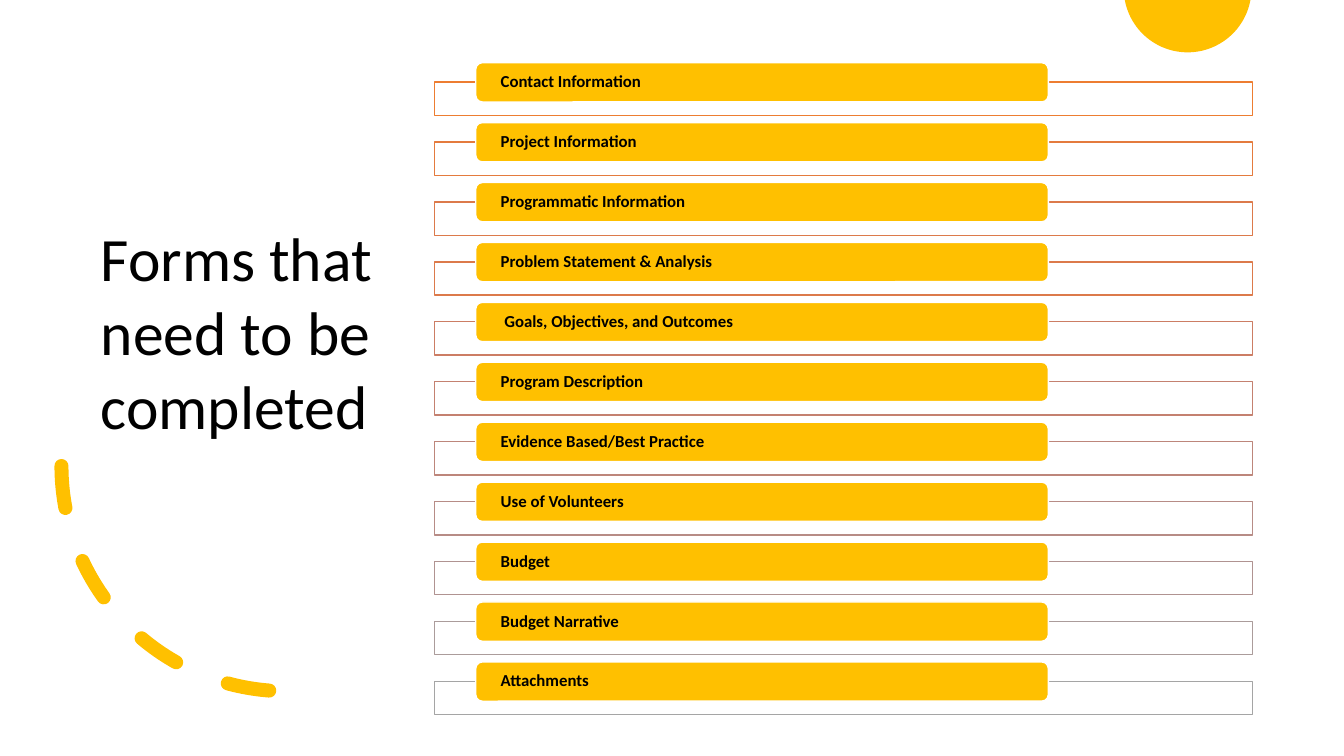
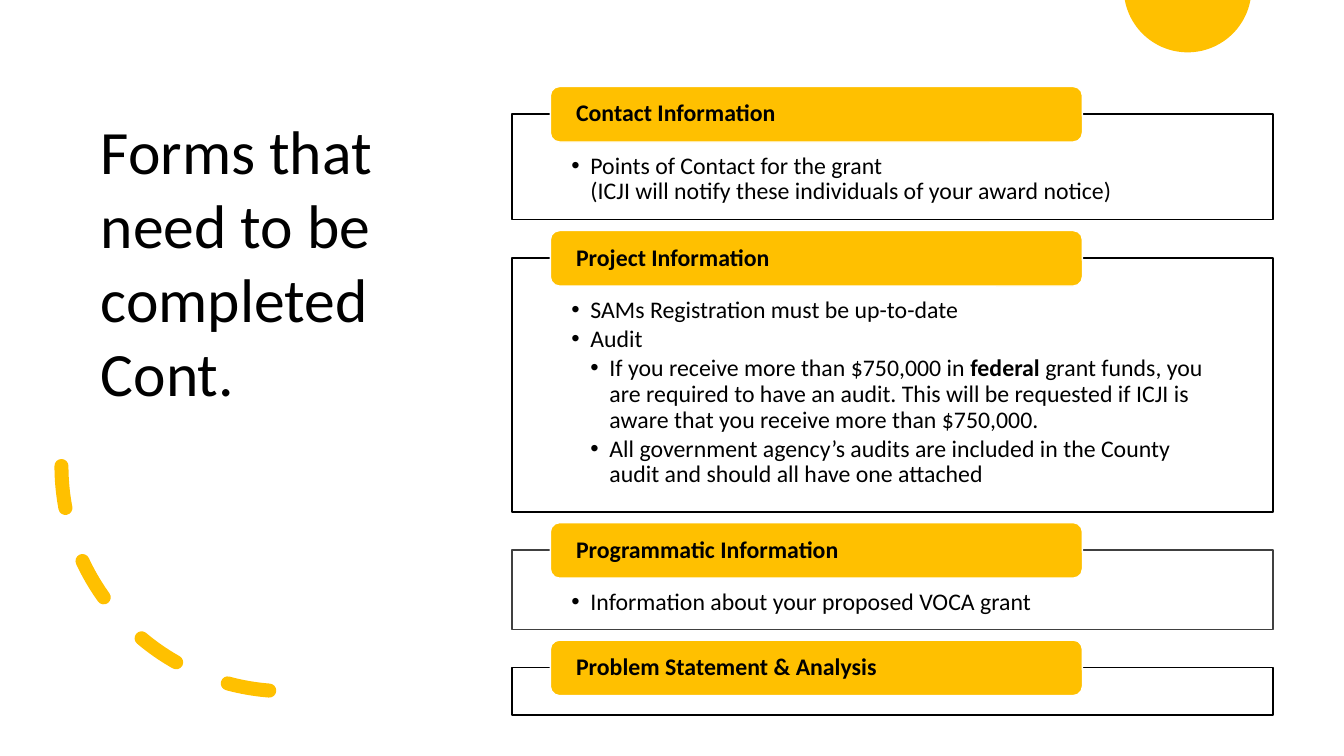
import math

from lxml import etree
from pptx import Presentation
from pptx.dml.color import RGBColor
from pptx.enum.dml import MSO_LINE
from pptx.enum.shapes import MSO_SHAPE
from pptx.enum.text import MSO_ANCHOR, MSO_AUTO_SIZE, PP_ALIGN
from pptx.oxml.ns import qn
from pptx.util import Cm, Pt

ARC = MSO_SHAPE.ARC
RECTANGLE = MSO_SHAPE.RECTANGLE
ROUNDED_RECTANGLE = MSO_SHAPE.ROUNDED_RECTANGLE
DASH = MSO_LINE.DASH
LEFT = PP_ALIGN.LEFT
TOP = MSO_ANCHOR.TOP
MIDDLE = MSO_ANCHOR.MIDDLE
GROW = MSO_AUTO_SIZE.SHAPE_TO_FIT_TEXT
NO_AUTOFIT = MSO_AUTO_SIZE.NONE

GOLD = RGBColor(0xFF, 0xC0, 0x00)
WHITE = RGBColor(0xFF, 0xFF, 0xFF)
BLACK = RGBColor(0x00, 0x00, 0x00)
CHARCOAL = RGBColor(0x40, 0x40, 0x40)

FONT = "Calibri"
BULLET_INDENT = 0.48
TITLE_INSETS = (0.25, 0.13, 0.25, 0.13)
TAB_INSETS = (0.58, 0, 0.58, 0)
BODY_INSETS = (1.5, 1, 1.5, 0.33)

FORM_LIST = [
    ("Contact Information", "ED7D31"),
    ("Project Information", "E47B3E"),
    ("Programmatic Information", "DC7A4B"),
    ("Problem Statement & Analysis", "DC7A4B"),
    (" Goals, Objectives, and Outcomes", "CC7D64"),
    ("Program Description", "C48170"),
    ("Evidence Based/Best Practice", "BD867B"),
    ("Use of Volunteers", "B78C86"),
    ("Budget", "B09391"),
    ("Budget Narrative", "AB9C9B"),
    ("Attachments", "A5A5A5"),
]
FORM_HEIGHT = 0.84
FORM_SECTIONS = [
    (heading, RGBColor.from_string(color), FORM_HEIGHT, []) for heading, color in FORM_LIST
]
FORM_LAYOUT = {
    "left": 10.95, "top": 2.07, "width": 20.62, "gap": 0.67,
    "tab_left": 11.99, "tab_width": 14.43, "tab_height": 0.99, "tab_rise": 0.49, "size": 12,
}

DETAIL_SECTIONS = [
    ("Contact Information", BLACK, 2.67, [
        (1, "Points of Contact for the grant\n"
            "(ICJI will notify these individuals of your award notice)"),
    ]),
    ("Project Information", BLACK, 6.4, [
        (1, "SAMs Registration must be up-to-date"),
        (1, "Audit"),
        (2, "If you receive more than $750,000 in **federal** grant funds, you are required "
            "to have an audit. This will be requested if ICJI is aware that you receive "
            "more than $750,000."),
        (2, "All government agency’s audits are included in the County audit and should "
            "all have one attached"),
    ]),
    ("Programmatic Information", CHARCOAL, 2, [
        (1, "Information about your proposed VOCA grant"),
    ]),
    ("Problem Statement & Analysis", BLACK, 1.2, []),
]
DETAIL_LAYOUT = {
    "left": 12.9, "top": 2.87, "width": 19.18, "gap": 0.96,
    "tab_left": 13.87, "tab_width": 13.41, "tab_height": 1.4, "tab_rise": 0.69, "size": 17,
}


def add_bullet(paragraph, level):
    properties = paragraph._p.get_or_add_pPr()
    properties.set("marL", str(Cm(BULLET_INDENT * level)))
    properties.set("indent", str(-Cm(BULLET_INDENT)))
    font = etree.SubElement(properties, qn("a:buFont"))
    font.set("typeface", "Arial")
    etree.SubElement(properties, qn("a:buChar")).set("char", "•")


def add_runs(paragraph, text, size, bold):
    for part_number, part in enumerate(text.split("**")):
        for line_number, line in enumerate(part.split("\n")):
            if line_number:
                paragraph.add_line_break()
            run = paragraph.add_run()
            run.text = line
            run.font.name = FONT
            run.font.size = Pt(size)
            run.font.color.rgb = BLACK
            run.font.bold = bold or part_number % 2 == 1


def write_text(shape, paragraphs, size, bold=False, insets=TITLE_INSETS, anchor=TOP,
               line_spacing=1.0, space_after=0, auto_size=NO_AUTOFIT):
    frame = shape.text_frame
    frame.word_wrap = True
    frame.auto_size = auto_size
    frame.vertical_anchor = anchor
    frame.margin_left, frame.margin_top, frame.margin_right, frame.margin_bottom = map(Cm, insets)
    for number, (level, text) in enumerate(paragraphs):
        paragraph = frame.add_paragraph() if number else frame.paragraphs[0]
        paragraph.alignment = LEFT
        paragraph.line_spacing = line_spacing
        paragraph.space_after = Pt(space_after)
        if level:
            add_bullet(paragraph, level)
        add_runs(paragraph, text, size, bold)


def add_box(slide, kind, left, top, width, height, fill, line):
    shape = slide.shapes.add_shape(kind, Cm(left), Cm(top), Cm(width), Cm(height))
    shape.shadow.inherit = False
    shape.fill.solid()
    shape.fill.fore_color.rgb = fill
    shape.line.color.rgb = line
    shape.line.width = Pt(1)
    return shape


def set_opacity(shape, percent):
    color = shape.element.spPr.find(qn("a:solidFill"))[0]
    etree.SubElement(color, qn("a:alpha")).set("val", str(percent * 1000))


def add_sun(slide):
    center_x, center_y, radius, steps = 29.93, -0.29, 1.61, 60
    start = math.asin(-center_y / radius)
    sweep = math.pi - 2 * start
    angles = [start + sweep * step / steps for step in range(steps + 1)]
    points = [
        (Cm(center_x + radius * math.cos(angle)), Cm(center_y + radius * math.sin(angle)))
        for angle in angles
    ]
    builder = slide.shapes.build_freeform(*points[0])
    builder.add_line_segments(points[1:], close=True)
    sun = builder.convert_to_shape()
    sun.shadow.inherit = False
    sun.fill.solid()
    sun.fill.fore_color.rgb = GOLD
    sun.line.fill.background()


def add_dashed_arc(slide):
    arc = slide.shapes.add_shape(ARC, Cm(1.55), Cm(6.07), Cm(11.35), Cm(11.35))
    arc.shadow.inherit = False
    arc.rotation = 90
    arc.element.spPr.find(qn("a:xfrm")).set("flipV", "1")
    arc.fill.background()
    arc.line.color.rgb = GOLD
    arc.line.width = Pt(10)
    arc.line.dash_style = DASH
    arc.element.spPr.find(qn("a:ln")).set("cap", "rnd")


def add_title(slide, text, top, height):
    title = slide.shapes.add_textbox(Cm(2.29), Cm(top), Cm(9.86), Cm(height))
    write_text(title, [(0, text)], size=44, auto_size=GROW)


def add_sections(slide, sections, layout):
    top = layout["top"]
    size = layout["size"]
    for heading, color, height, bullets in sections:
        frame = add_box(slide, RECTANGLE, layout["left"], top, layout["width"], height,
                        WHITE, color)
        set_opacity(frame, 90)
        if bullets:
            write_text(frame, bullets, size, insets=BODY_INSETS, line_spacing=0.9,
                       space_after=2.5)
        tab = add_box(slide, ROUNDED_RECTANGLE, layout["tab_left"], top - layout["tab_rise"],
                      layout["tab_width"], layout["tab_height"], GOLD, WHITE)
        write_text(tab, [(0, heading)], size, bold=True, insets=TAB_INSETS, anchor=MIDDLE,
                   line_spacing=0.9)
        top += height + layout["gap"]


def add_forms_slide(presentation, title, title_top, title_height, sections, layout):
    slide = presentation.slides.add_slide(presentation.slide_layouts[6])
    add_sun(slide)
    add_dashed_arc(slide)
    add_title(slide, title, title_top, title_height)
    add_sections(slide, sections, layout)


def main():
    presentation = Presentation()
    presentation.slide_width = Cm(33.87)
    presentation.slide_height = Cm(19.05)
    add_forms_slide(presentation, "Forms that need to be completed", 5.41, 5.9,
                    FORM_SECTIONS, FORM_LAYOUT)
    add_forms_slide(presentation, "Forms that need to be completed Cont.", 2.72, 7.77,
                    DETAIL_SECTIONS, DETAIL_LAYOUT)
    presentation.save("out.pptx")


if __name__ == "__main__":
    main()
